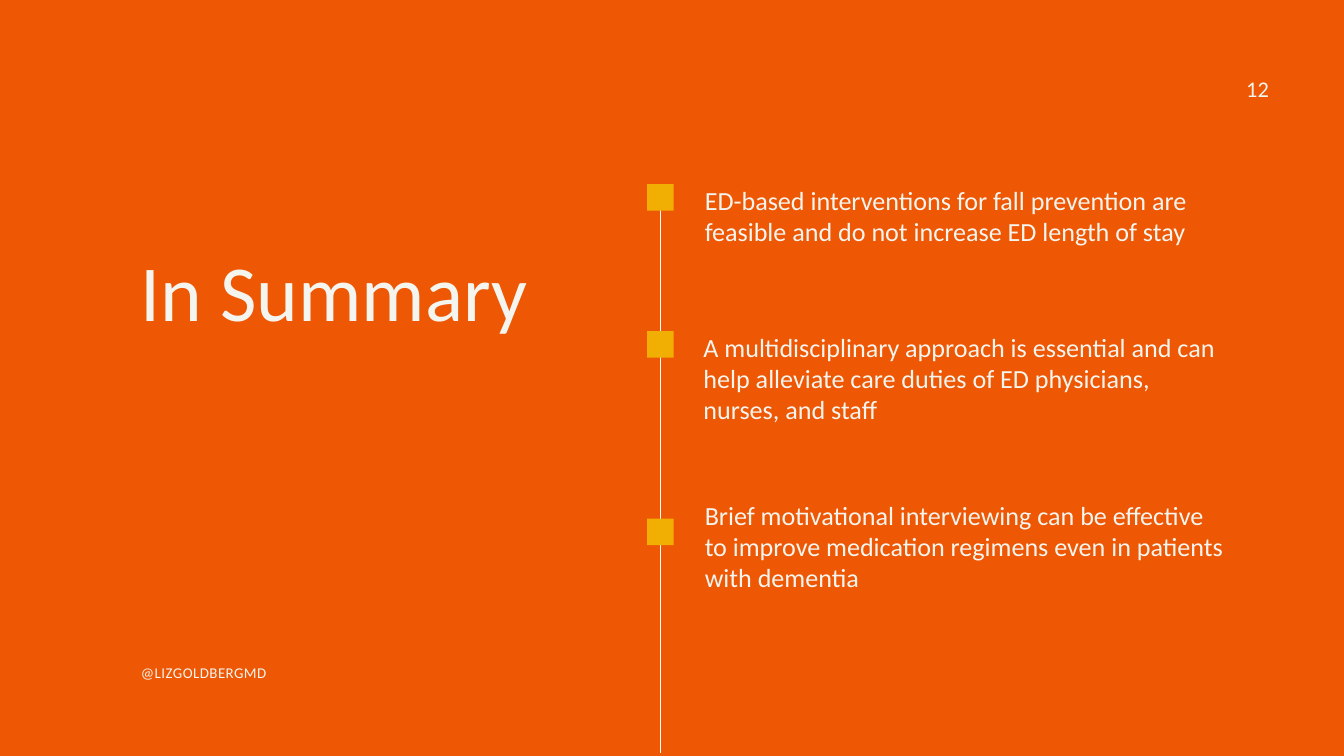
from lxml import etree
from pptx import Presentation
from pptx.dml.color import RGBColor
from pptx.enum.shapes import MSO_CONNECTOR, MSO_SHAPE
from pptx.enum.text import PP_ALIGN
from pptx.oxml.ns import qn
from pptx.util import Cm, Pt

STRAIGHT = MSO_CONNECTOR.STRAIGHT
RECTANGLE = MSO_SHAPE.RECTANGLE
LEFT, RIGHT = PP_ALIGN.LEFT, PP_ALIGN.RIGHT

COLORS = {
    "background": "EE5703",
    "text": "F5F5EF",
    "marker": "F1AE03",
    "timeline": "FFFFFF",
}
FONT = "Calibri"

TITLE = "In Summary"
HANDLE = "@LIZGOLDBERGMD"
PAGE_NUMBER = "12"
# (takeaway, text left, text top, marker top)
TAKEAWAYS = [
    ("ED-based interventions for fall prevention are feasible and do not "
     "increase ED length of stay", 26.64, 6.96, 6.96),
    ("A multidisciplinary approach is essential and can help alleviate care "
     "duties of ED physicians, nurses, and staff", 26.59, 12.52, 12.52),
    ("Brief motivational interviewing can be effective to improve medication "
     "regimens even in patients with dementia", 26.64, 18.87, 19.61),
]

MARGIN_LEFT = 5.33
TAKEAWAY_WIDTH, TAKEAWAY_HEIGHT = 19.74, 3.5
MARKER_LEFT, MARKER_SIZE = 24.46, 1
TIMELINE_BOTTOM = 28.45


def color(name):
    return RGBColor.from_string(COLORS[name])


def add_text(slide, text, box, size, leading, align=LEFT, tracking=0):
    frame = slide.shapes.add_textbox(*map(Cm, box)).text_frame
    frame.word_wrap = True
    frame.margin_left = frame.margin_right = 0
    frame.margin_top = frame.margin_bottom = 0
    paragraph = frame.paragraphs[0]
    paragraph.alignment = align
    paragraph.line_spacing = Pt(leading)
    run = paragraph.add_run()
    run.text = text
    run.font.name = FONT
    run.font.size = Pt(size)
    run.font.color.rgb = color("text")
    if tracking:
        run.font._element.set("spc", str(int(tracking * 100)))


def add_timeline(slide):
    x = Cm(MARKER_LEFT + MARKER_SIZE / 2)
    top = Cm(TAKEAWAYS[0][3] + MARKER_SIZE / 2)
    timeline = slide.shapes.add_connector(STRAIGHT, x, top, x, Cm(TIMELINE_BOTTOM))
    timeline.line.color.rgb = color("timeline")
    timeline.line.width = Pt(0.75)
    etree.SubElement(timeline._element.spPr, qn("a:effectLst"))


def add_marker(slide, top):
    marker = slide.shapes.add_shape(
        RECTANGLE, Cm(MARKER_LEFT), Cm(top), Cm(MARKER_SIZE), Cm(MARKER_SIZE))
    marker.shadow.inherit = False
    marker.fill.solid()
    marker.fill.fore_color.rgb = color("marker")
    marker.line.fill.background()


def main():
    deck = Presentation()
    deck.slide_width, deck.slide_height = Cm(50.8), Cm(28.58)
    slide = deck.slides.add_slide(deck.slide_layouts[6])
    slide.background.fill.solid()
    slide.background.fill.fore_color.rgb = color("background")

    add_text(slide, TITLE, (MARGIN_LEFT, 9.45, 16.21, 3.35), 85, 93.5)
    add_timeline(slide)
    for takeaway, left, top, marker_top in TAKEAWAYS:
        add_text(slide, takeaway, (left, top, TAKEAWAY_WIDTH, TAKEAWAY_HEIGHT), 28, 33.6)
        add_marker(slide, marker_top)
    add_text(slide, HANDLE, (MARGIN_LEFT, 24.97, 19.13, 0.76), 16, 22.4, tracking=0.5)
    add_text(slide, PAGE_NUMBER, (46.41, 3, 1.55, 0.79), 24, 24, align=RIGHT)

    deck.save("out.pptx")


if __name__ == "__main__":
    main()
